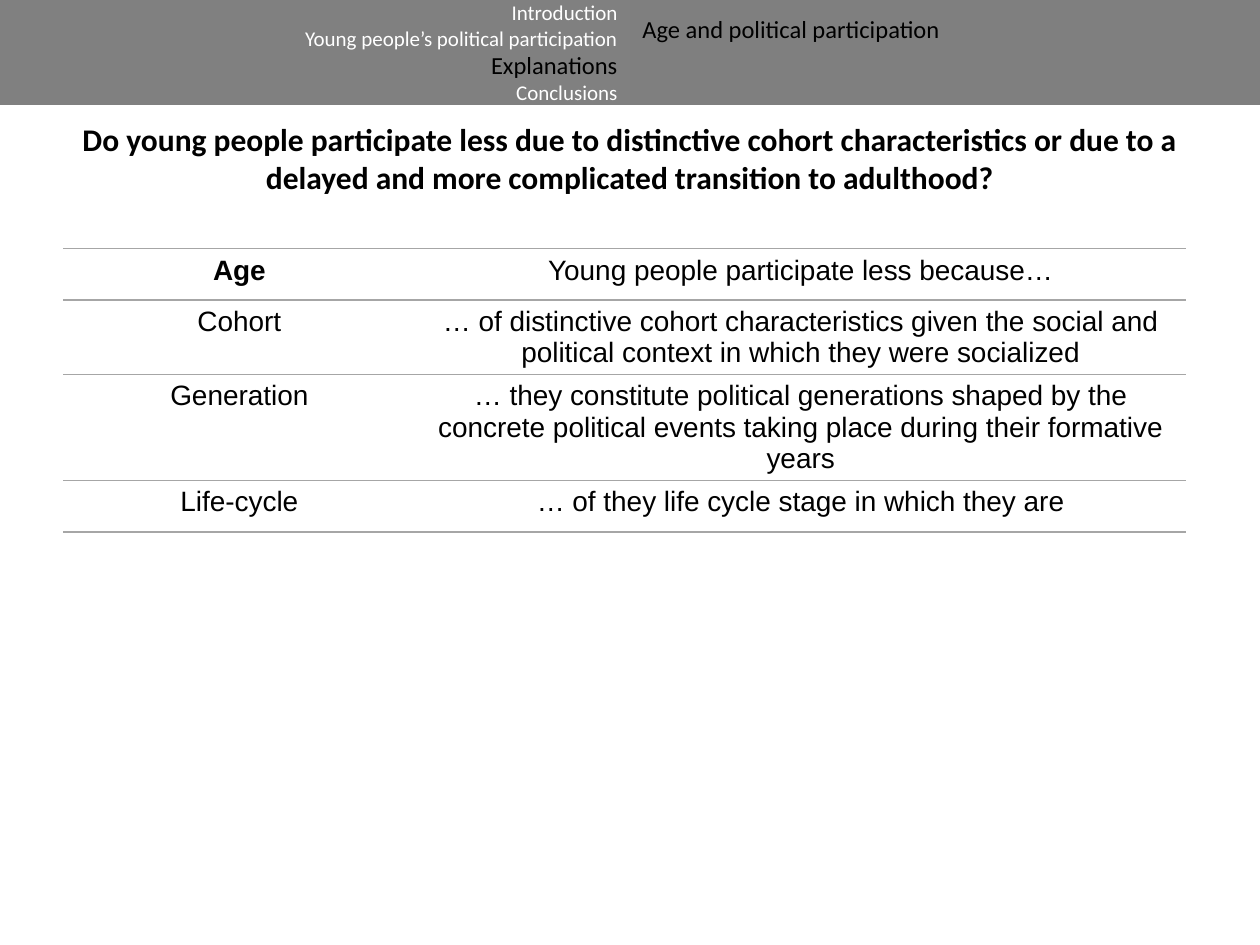
from lxml import etree
from pptx import Presentation, util as u
from pptx.dml.color import RGBColor
from pptx.enum import shapes, text
from pptx.oxml.ns import qn

AL = text.PP_ALIGN
MID = text.MSO_ANCHOR.MIDDLE
TOP = text.MSO_ANCHOR.TOP
BAND = 1 / 9  # header height as a share of the slide


def tint(code):
    return RGBColor.from_string(code)


class Deck:
    def __init__(self):
        self.prs = Presentation()
        self.prs.slide_width = u.Inches(10)
        self.prs.slide_height = u.Inches(7.5)
        self.slide = self.prs.slides.add_slide(self.prs.slide_layouts[5])
        self.ink, self.pale, self.rule = "000000", "FFFFFF", "A6A6A6"

    def box(self, x, y, w, h):
        """Turn shares of the slide's size into lengths."""
        wide, high = self.prs.slide_width, self.prs.slide_height
        return [round(v) for v in (x * wide, y * high, w * wide, h * high)]

    def style(self, para, size, font="Calibri", color=None, bold=False, align=AL.CENTER):
        para.alignment = align
        for run in para.runs:
            run.font.size = u.Pt(size)
            run.font.name = font
            run.font.bold = bold
            run.font.color.rgb = tint(color or self.ink)

    def title(self, words, *area):
        head = self.slide.shapes.title
        head.left, head.top, head.width, head.height = self.box(*area)
        frame = head.text_frame
        frame.text = words
        frame.word_wrap = True
        frame.auto_size = text.MSO_AUTO_SIZE.NONE
        frame.vertical_anchor = MID
        self.style(frame.paragraphs[0], 18, bold=True)

    def panel(self, lines, area, fill, align, anchor=MID, inset=0.05):
        """Draw a header half; lines are (words, size, colour)."""
        rect = self.slide.shapes.add_shape(
            shapes.MSO_SHAPE.RECTANGLE, *self.box(*area))
        rect.shadow.inherit = False
        rect.fill.solid()
        rect.fill.fore_color.rgb = tint(fill)
        rect.line.fill.background()
        frame = rect.text_frame
        frame.margin_top = u.Inches(inset)
        frame.vertical_anchor = anchor
        frame.text = "\n".join(words for words, _, _ in lines)
        for para, (_, size, color) in zip(frame.paragraphs, lines):
            self.style(para, size, color=color, align=align)

    def edge(self, cell):
        """Rule a cell above and below only."""
        props = cell._tc.get_or_add_tcPr()
        for place, side in enumerate(("lnL", "lnR", "lnT", "lnB")):
            line = etree.Element(qn("a:" + side), w=str(u.Pt(1)))
            if side in ("lnT", "lnB"):
                fill = etree.SubElement(line, qn("a:solidFill"))
                etree.SubElement(fill, qn("a:srgbClr"), val=self.rule)
            else:
                etree.SubElement(line, qn("a:noFill"))
            props.insert(place, line)

    def table(self, rows, area, cols, highs):
        grid = self.slide.shapes.add_table(
            len(rows), len(cols), *self.box(*area)).table
        grid.first_row = grid.horz_banding = False
        for col, wide in zip(grid.columns, cols):
            col.width = u.Inches(wide)
        for row, high, words in zip(grid.rows, highs, rows):
            row.height = u.Inches(high)
            for cell, word in zip(row.cells, words):
                cell.text = word
                cell.margin_top, cell.margin_bottom = u.Inches(0.05), u.Inches(0.03)
                cell.vertical_anchor = TOP
                cell.fill.background()
                self.style(cell.text_frame.paragraphs[0], 16, "Arial",
                           bold=word == "Age")
                self.edge(cell)


def main():
    deck = Deck()
    deck.title("Do young people participate less due to distinctive cohort "
               "characteristics or due to a delayed and more complicated "
               "transition to adulthood?", 0.05, BAND, 0.9, BAND)
    rows = [
        ("Age", "Young people participate less because…"),
        ("Cohort", "… of distinctive cohort characteristics given the social "
                   "and political context in which they were socialized"),
        ("Generation", "… they constitute political generations shaped by the "
                       "concrete political events taking place during their "
                       "formative years"),
        ("Life-cycle", "… of they life cycle stage in which they are"),
    ]
    deck.table(rows, (0.05, 0.263, 0.89, 0.3), (2.8, 6.11), (0.41, 0.59, 0.84, 0.41))
    deck.panel([("Age and political participation", 14, deck.ink)],
               (0.5, 0, 0.5, BAND), "7F7F7F", AL.LEFT, TOP, 0.11)
    steps = ["Introduction", "Young people’s political participation",
             "Explanations", "Conclusions"]
    lines = [(step, 14, deck.ink) if step == "Explanations"
             else (step, 12, deck.pale) for step in steps]
    deck.panel(lines, (0, 0, 0.5, BAND), "808080", AL.RIGHT)
    deck.prs.save("out.pptx")


if __name__ == "__main__":
    main()
